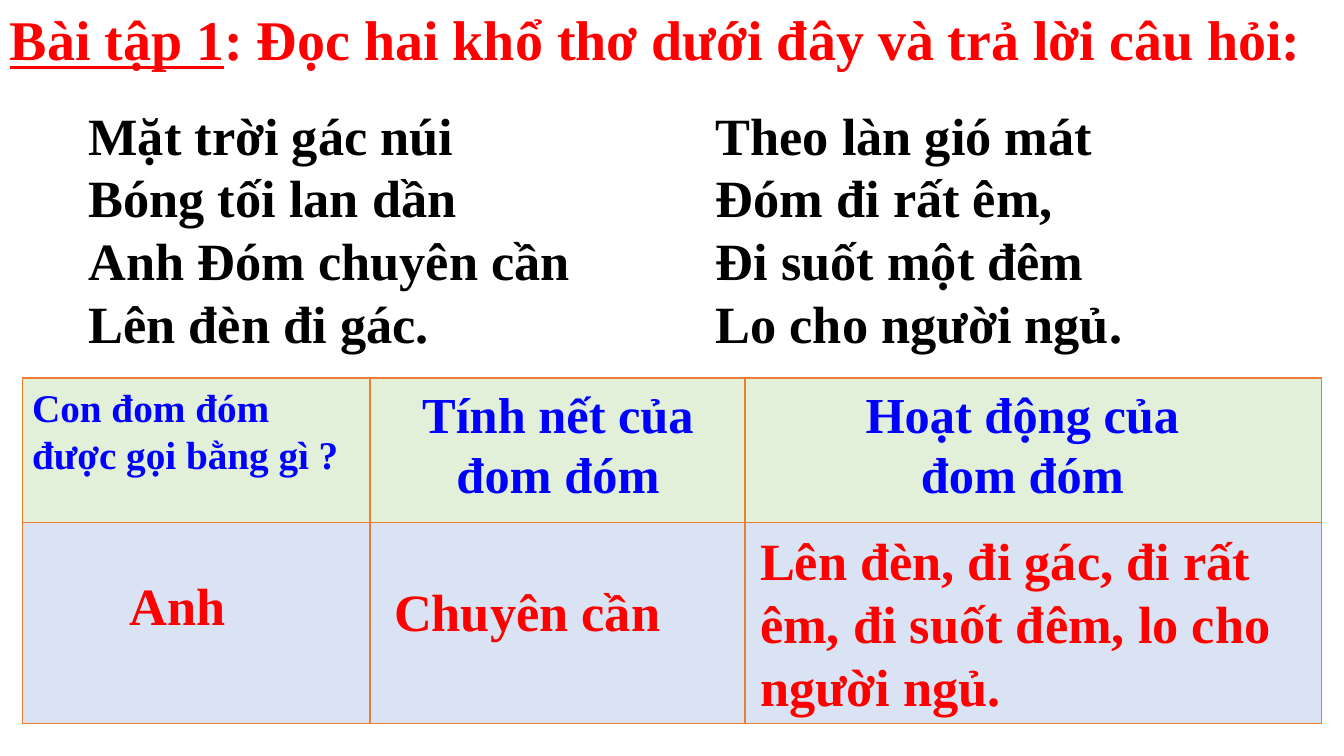
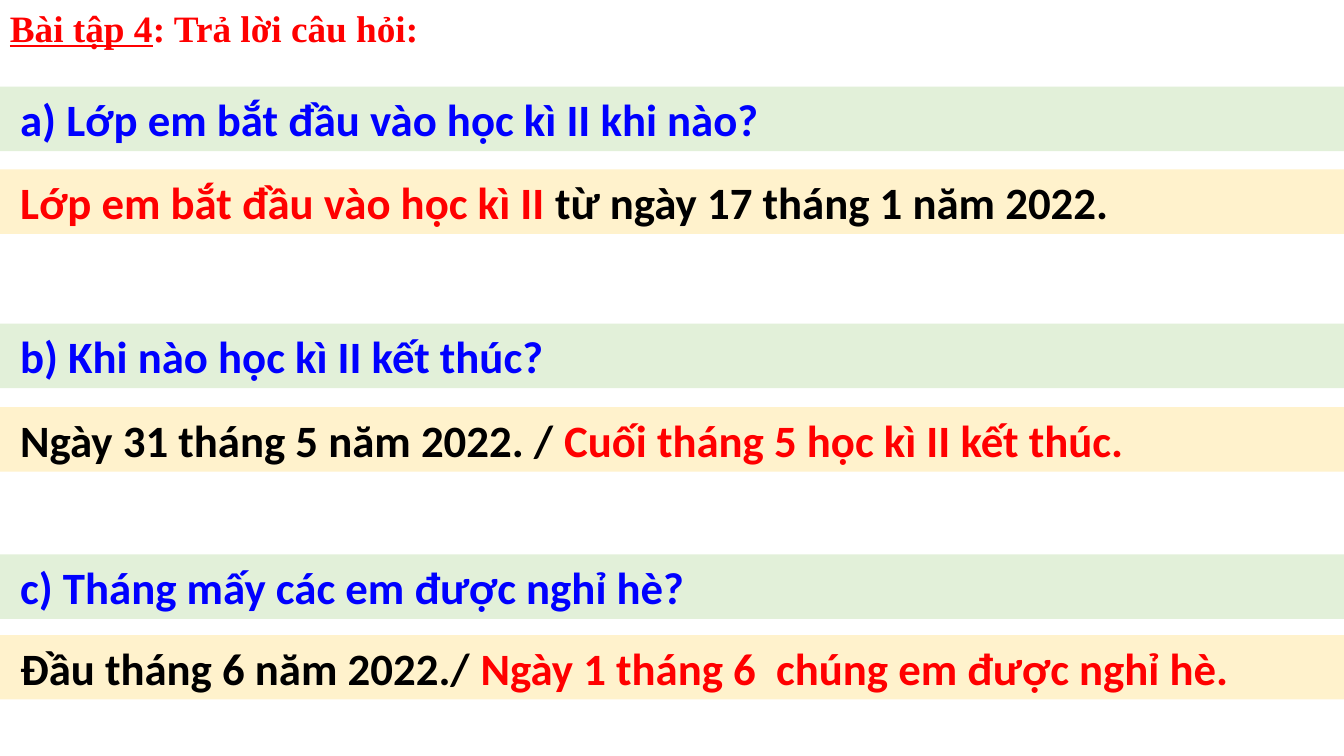
from dataclasses import dataclass

from lxml.etree import SubElement
from pptx import Presentation
from pptx.dml.color import RGBColor
from pptx.enum.shapes import MSO_SHAPE
from pptx.enum.text import MSO_AUTO_SIZE, PP_ALIGN
from pptx.oxml.ns import qn
from pptx.util import Inches, Pt


@dataclass(frozen=True)
class Theme:
    # Colours
    red: str = "FF0000"
    blue: str = "0000FF"
    black: str = "000000"
    green_band: str = "E2F0D9"
    yellow_band: str = "FFF2CC"
    answer_cell: str = "DAE3F3"
    border: str = "ED7D31"
    # Fonts and type sizes
    serif: str = "Times New Roman"
    sans: str = "Calibri"
    title: float = 40
    small_title: float = 26.6
    verse: float = 37.4
    header: float = 36
    small_header: float = 28
    band: float = 32


THEME = Theme()
PAGE_WIDTH, PAGE_HEIGHT = 13.33, 7.5
BAND_HEIGHT = 0.64


# Text
def add_span(para, text, size, color, font=THEME.serif, underline=False):
    span = para.add_run()
    span.text = text
    formats = {"name": font, "size": Pt(size), "bold": True, "underline": underline}
    for name, value in formats.items():
        setattr(span.font, name, value)
    span.font.color.rgb = RGBColor.from_string(color)


def add_text_box(page, left, top, width, height):
    box = page.shapes.add_textbox(*map(Inches, (left, top, width, height)))
    box.text_frame.word_wrap = True
    box.text_frame.auto_size = MSO_AUTO_SIZE.SHAPE_TO_FIT_TEXT
    return box.text_frame


def add_title(page, label, text, size, height):
    para = add_text_box(page, 0, 0, PAGE_WIDTH, height).paragraphs[0]
    add_span(para, label, size, THEME.red, underline=True)
    add_span(para, text, size, THEME.red)


def add_stanza(page, left, lines):
    frame = add_text_box(page, left, 0.97, 5.33, 2.61)
    for index, line in enumerate(lines):
        para = frame.add_paragraph() if index else frame.paragraphs[0]
        add_span(para, line, THEME.verse, THEME.black)


def add_label(page, place, text, size, color, align):
    para = add_text_box(page, *place).paragraphs[0]
    para.alignment = align
    add_span(para, text, size, color)


# Full-width band with coloured spans
def add_band(page, top, fill, spans):
    band = page.shapes.add_shape(
        MSO_SHAPE.RECTANGLE, 0, Inches(top), Inches(PAGE_WIDTH), Inches(BAND_HEIGHT))
    band.shadow.inherit = False
    band.fill.solid()
    band.fill.fore_color.rgb = RGBColor.from_string(fill)
    band.line.fill.background()
    frame = band.text_frame
    formats = {"word_wrap": True, "margin_left": Inches(0.2),
               "auto_size": MSO_AUTO_SIZE.SHAPE_TO_FIT_TEXT}
    for name, value in formats.items():
        setattr(frame, name, value)
    para = frame.paragraphs[0]
    para.alignment = PP_ALIGN.LEFT
    for text, color in spans:
        add_span(para, text, THEME.band, color, THEME.sans)


# Table grid
def set_borders(cell):
    properties = cell._tc.get_or_add_tcPr()
    for index, side in enumerate(("a:lnL", "a:lnR", "a:lnT", "a:lnB")):
        line = SubElement(properties, qn(side), w=str(Pt(1)))
        fill = SubElement(line, qn("a:solidFill"))
        SubElement(fill, qn("a:srgbClr"), val=THEME.border)
        properties.insert(index, line)


def add_grid(page, widths, heights, fills):
    frame = page.shapes.add_table(
        len(heights), len(widths), Inches(0.22), Inches(3.75),
        Inches(sum(widths)), Inches(sum(heights)))
    table = frame.table
    table.first_row = table.horz_banding = False
    for column, width in zip(table.columns, widths):
        column.width = Inches(width)
    for row, height, fill in zip(table.rows, heights, fills):
        row.height = Inches(height)
        for cell in row.cells:
            cell.fill.solid()
            cell.fill.fore_color.rgb = RGBColor.from_string(fill)
            set_borders(cell)


# Slides
def build_poem_page(page):
    add_grid(page, (3.45, 3.72, 5.72), (1.43, 2.0),
             (THEME.green_band, THEME.answer_cell))
    add_title(page, "Bài tập 1", ": Đọc hai khổ thơ dưới đây và trả lời câu hỏi:",
              THEME.title, 0.77)
    add_stanza(page, 0.78, ("Mặt trời gác núi", "Bóng tối lan dần",
                            "Anh Đóm chuyên cần", "Lên đèn đi gác."))
    add_stanza(page, 7, ("Theo làn gió mát", "Đóm đi rất êm,",
                         "Đi suốt một đêm", "Lo cho người ngủ."))
    left, center = PP_ALIGN.LEFT, PP_ALIGN.CENTER
    # Each label: place, text, size, colour, alignment
    labels = (
        ((0.22, 3.75, 3.44, 1.51), "Con đom đóm được gọi bằng gì ?",
         THEME.small_header, THEME.blue, left),
        ((3.67, 3.75, 3.73, 1.31), "Tính nết của đom đóm",
         THEME.header, THEME.blue, center),
        ((8.44, 3.75, 3.4, 1.31), "Hoạt động của đom đóm",
         THEME.header, THEME.blue, center),
        ((0.33, 5.64, 2.99, 0.73), "Anh ", THEME.verse, THEME.red, center),
        ((3.44, 5.7, 3.71, 0.73), "Chuyên cần ", THEME.verse, THEME.red, center),
        ((7.44, 5.19, 5.62, 1.99),
         "Lên đèn, đi gác, đi rất êm, đi suốt đêm, lo cho người ngủ.",
         THEME.verse, THEME.red, left),
    )
    for label in labels:
        add_label(page, *label)


def build_question_page(page):
    add_title(page, "Bài tập 4", ": Trả lời câu hỏi:", THEME.small_title, 0.55)
    # Question top, question, answer top, answer spans
    exercises = (
        (0.86, "a) Lớp em bắt đầu vào học kì II khi nào?", 1.68,
         (("Lớp em bắt đầu vào học kì II ", THEME.red),
          ("từ ngày 17 tháng 1 năm 2022.", THEME.black))),
        (3.21, "b) Khi nào học kì II kết thúc?", 4.04,
         (("Ngày 31 tháng 5 năm 2022. / ", THEME.black),
          ("Cuối tháng 5 học kì II kết thúc.", THEME.red))),
        (5.5, "c) Tháng mấy các em được nghỉ hè?", 6.3,
         (("Đầu tháng 6 năm 2022./ ", THEME.black),
          ("Ngày 1 tháng 6  chúng em được nghỉ hè.", THEME.red))),
    )
    for question_top, question, answer_top, answer in exercises:
        add_band(page, question_top, THEME.green_band, ((question, THEME.blue),))
        add_band(page, answer_top, THEME.yellow_band, answer)


def main():
    deck = Presentation()
    deck.slide_width, deck.slide_height = Inches(PAGE_WIDTH), Inches(PAGE_HEIGHT)
    for build in (build_poem_page, build_question_page):
        build(deck.slides.add_slide(deck.slide_layouts[6]))
    deck.save("out.pptx")


if __name__ == "__main__":
    main()
